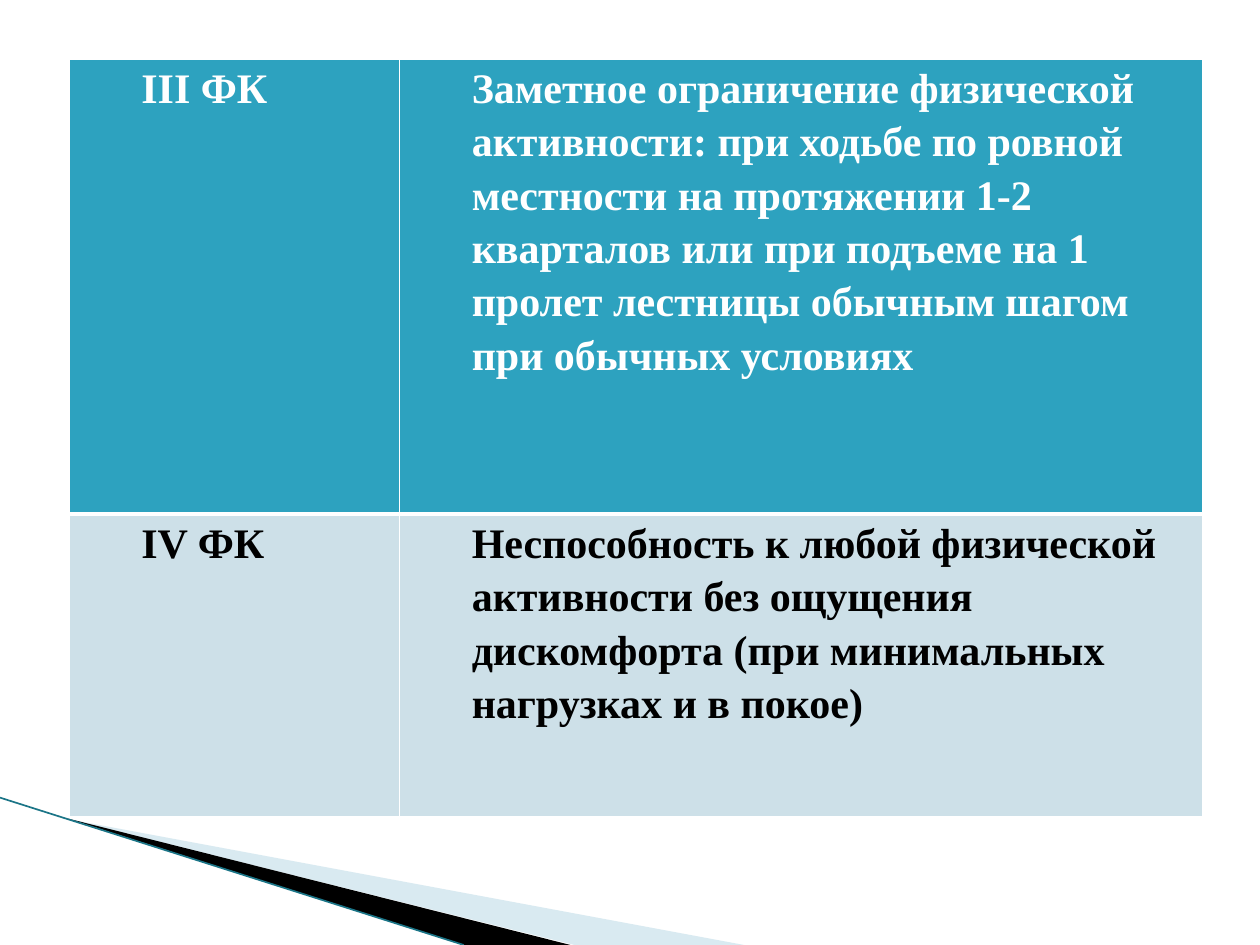
from lxml import etree
from pptx import Presentation
from pptx import util as u
from pptx.dml.color import RGBColor
from pptx.enum import shapes
from pptx.oxml.ns import qn

WHITE = RGBColor(0xFF, 0xFF, 0xFF)
BLACK = RGBColor(0x00, 0x00, 0x00)
TEAL = RGBColor(0x2D, 0xA2, 0xBF)
PALE_TEAL = RGBColor(0xCD, 0xE0, 0xE8)
WEDGE_BLUE = RGBColor(0xA0, 0xCB, 0xDC)
EDGE_TEAL = RGBColor(0x1B, 0x75, 0x87)

CLASSES = [
    ("III ФК", "Заметное ограничение физической активности: при ходьбе по ровной "
               "местности на протяжении 1-2 кварталов или при подъеме на 1 пролет "
               "лестницы обычным шагом при обычных условиях"),
    ("IV ФК", "Неспособность к любой физической активности без ощущения "
              "дискомфорта (при минимальных нагрузках и в покое)"),
]
ROW_STYLES = [
    {"fill": TEAL, "text": WHITE, "borders": {"L": 1, "R": 1, "T": 1, "B": 3}},
    {"fill": PALE_TEAL, "text": BLACK, "borders": {"L": 1, "R": 1, "T": 1, "B": 1}},
]
TABLE_LEFT, TABLE_TOP = 1.39, 1.19
COLUMN_WIDTHS = [6.66, 16.2]
ROW_HEIGHTS = [9.17, 6.11]

# Frame (left, top, width, height) and corner points in cm, colour, opacity in percent
WEDGES = [
    ((1.98, 13.89, 10.57, 4.01),
     [(1.4, 16.52), (15.0, 19.05), (11.58, 19.05)], WEDGE_BLUE, 40),
    ((-0.15, 16.08, 10.57, 2.34),
     [(1.36, 16.5), (11.5, 19.05), (9.35, 19.05)], BLACK, 100),
]
EDGE = [(0, 16.08), (9.35, 19.05)]


def set_frame(shape, frame):
    """Move the frame of a freeform while its corners stay in place."""
    left, top, width, height = map(u.Cm, frame)
    shift = {"x": shape.left - left, "y": shape.top - top}
    outline = next(shape._element.iter(qn("a:path")))
    outline.set("w", str(width))
    outline.set("h", str(height))
    for point in outline.iter(qn("a:pt")):
        for axis, distance in shift.items():
            point.set(axis, str(int(point.get(axis)) + distance))
    shape.left, shape.top, shape.width, shape.height = left, top, width, height


def add_wedge(slide, frame, points, color, opacity):
    builder = slide.shapes.build_freeform(*map(u.Cm, points[0]))
    builder.add_line_segments([tuple(map(u.Cm, point)) for point in points[1:]])
    wedge = builder.convert_to_shape()
    set_frame(wedge, frame)
    wedge.shadow.inherit = False
    wedge.fill.solid()
    wedge.fill.fore_color.rgb = color
    wedge.line.fill.background()
    if opacity < 100:
        fill_color = wedge._element.spPr.find(qn("a:solidFill"))[0]
        etree.SubElement(fill_color, qn("a:alpha"), val=str(opacity * 1000))


def add_edge(slide):
    (x1, y1), (x2, y2) = EDGE
    edge = slide.shapes.add_connector(
        shapes.MSO_CONNECTOR.STRAIGHT, u.Cm(x1), u.Cm(y1), u.Cm(x2), u.Cm(y2))
    edge.line.color.rgb = EDGE_TEAL
    edge.line.width = u.Pt(0.95)
    etree.SubElement(edge._element.spPr, qn("a:effectLst"))


def set_borders(cell, borders):
    properties = cell._tc.get_or_add_tcPr()
    for side, width in borders.items():
        line = etree.SubElement(properties, qn(f"a:ln{side}"), w=str(u.Pt(width)))
        fill = etree.SubElement(line, qn("a:solidFill"))
        etree.SubElement(fill, qn("a:srgbClr"), val=str(WHITE))


def fill_cell(cell, content, style, space_after):
    set_borders(cell, style["borders"])
    cell.fill.solid()
    cell.fill.fore_color.rgb = style["fill"]
    margins = {"margin_left": 0.19, "margin_right": 0.19,
               "margin_top": 0, "margin_bottom": 0}
    for name, value in margins.items():
        setattr(cell, name, u.Cm(value))
    paragraph = cell.text_frame.paragraphs[0]
    paragraph._p.get_or_add_pPr().set("marL", str(u.Cm(1.27)))
    paragraph.line_spacing = 1.15
    paragraph.space_after = u.Pt(space_after)
    run = paragraph.add_run()
    run.text = content
    font = {"name": "Times New Roman", "size": u.Pt(24), "bold": True}
    for name, value in font.items():
        setattr(run.font, name, value)
    run.font.color.rgb = style["text"]


def add_class_table(slide):
    table = slide.shapes.add_table(
        len(CLASSES), len(COLUMN_WIDTHS), u.Cm(TABLE_LEFT), u.Cm(TABLE_TOP),
        u.Cm(sum(COLUMN_WIDTHS)), u.Cm(sum(ROW_HEIGHTS))).table
    for column, width in zip(table.columns, COLUMN_WIDTHS):
        column.width = u.Cm(width)
    for row, height, contents, style in zip(table.rows, ROW_HEIGHTS, CLASSES, ROW_STYLES):
        row.height = u.Cm(height)
        for cell, content, space_after in zip(row.cells, contents, (0, 10)):
            fill_cell(cell, content, style, space_after)


def main():
    presentation = Presentation()
    presentation.slide_width = u.Cm(25.4)
    presentation.slide_height = u.Cm(19.05)
    slide = presentation.slides.add_slide(presentation.slide_layouts[6])
    for wedge in WEDGES:
        add_wedge(slide, *wedge)
    add_edge(slide)
    add_class_table(slide)
    presentation.save("out.pptx")


if __name__ == "__main__":
    main()
